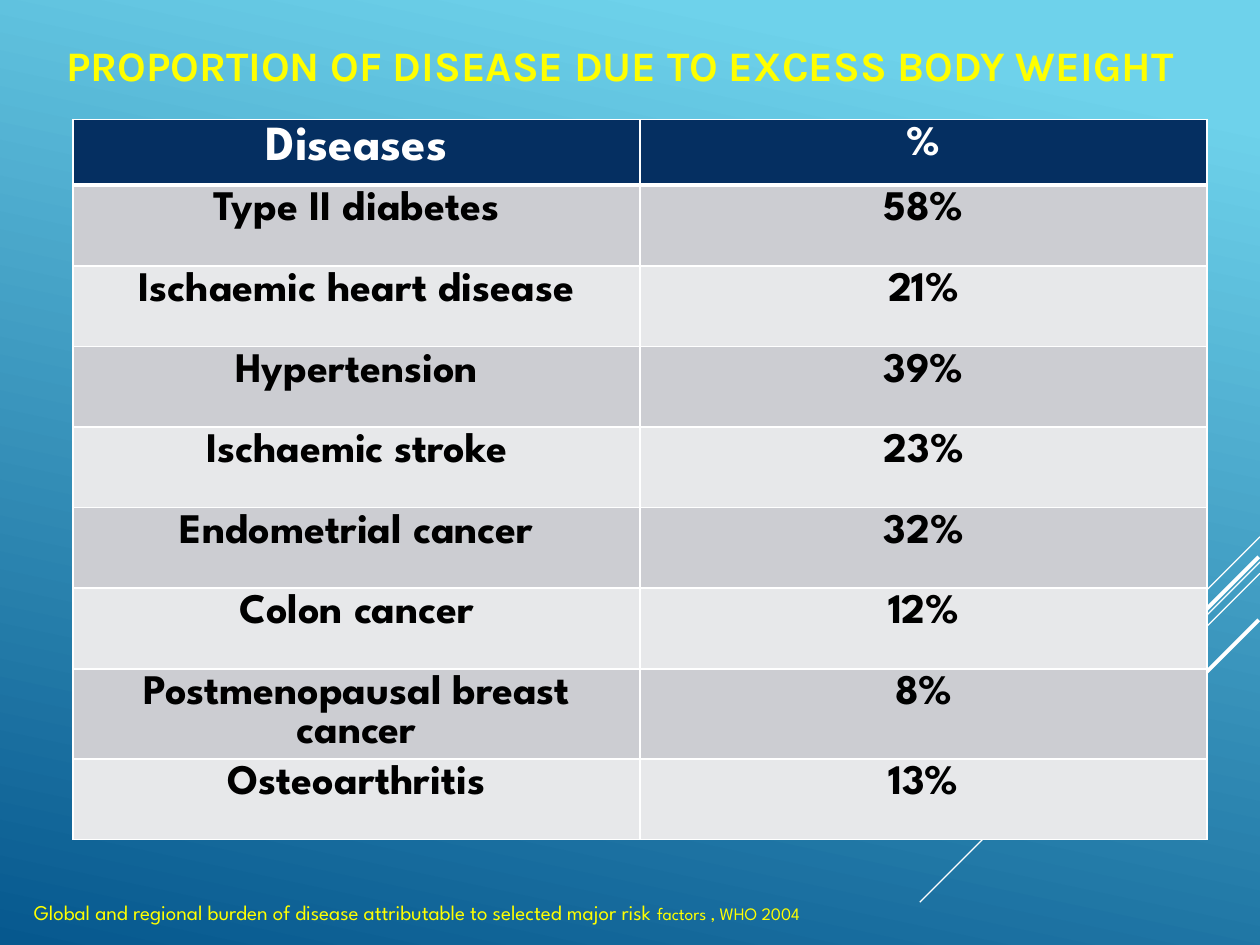
import pptx
import pptx.util
import pptx.dml.color
import pptx.enum.shapes
import pptx.enum.text
import pptx.oxml.ns
import lxml.etree

Inches = pptx.util.Inches
Pt = pptx.util.Pt
RGBColor = pptx.dml.color.RGBColor
CENTER = pptx.enum.text.PP_ALIGN.CENTER
MIDDLE = pptx.enum.text.MSO_ANCHOR.MIDDLE
qn = pptx.oxml.ns.qn

SKY = RGBColor(0x6E, 0xD2, 0xEB)
OCEAN = RGBColor(0x06, 0x58, 0x8E)
NAVY = RGBColor(0x05, 0x2F, 0x61)
BAND_DARK = RGBColor(0xCC, 0xCD, 0xD2)
BAND_LIGHT = RGBColor(0xE7, 0xE8, 0xEA)
WHITE = RGBColor(0xFF, 0xFF, 0xFF)
BLACK = RGBColor(0, 0, 0)
YELLOW = RGBColor(0xFF, 0xFF, 0)
BODY_FONT = "League Spartan"


def set_font(font, name, size, color, bold):
    font.name = name
    font.size = Pt(size)
    font.color.rgb = color
    font.bold = bold


def set_borders(cell, bottom):
    tc_pr = cell._tc.get_or_add_tcPr()
    for i, (side, width) in enumerate([("L", 1), ("R", 1), ("T", 1), ("B", bottom)]):
        ln = lxml.etree.Element(qn("a:ln" + side), w=str(Pt(width)))
        fill = lxml.etree.SubElement(ln, qn("a:solidFill"))
        lxml.etree.SubElement(fill, qn("a:srgbClr"), val=str(WHITE))
        tc_pr.insert(i, ln)


prs = pptx.Presentation()
prs.slide_width = Inches(10)
prs.slide_height = Inches(7.5)
s = prs.slides.add_slide(prs.slide_layouts[5])

bg = s.background.fill
bg.gradient()
bg.gradient_angle = 360 - 102
for stop, position, color in zip(bg.gradient_stops, (0.1, 1), (SKY, OCEAN)):
    stop.position = position
    stop.color.rgb = color

diagonals = [
    (10, 4.26, 0.83, 0.75),
    (10, 4.46, 2.7, 0.75),
    (10, 4.55, 1.72, 0.75),
    (9.99, 4.42, 1.57, 2.25),
    (9.99, 4.92, 1.14, 2.25),
]
for x, y, run, width in diagonals:
    line = s.shapes.add_connector(
        pptx.enum.shapes.MSO_CONNECTOR.STRAIGHT,
        Inches(x), Inches(y), Inches(x - run), Inches(y + run))
    line.line.color.rgb = WHITE
    line.line.width = Pt(width)
    lxml.etree.SubElement(line._element.spPr, qn("a:effectLst"))

title = s.shapes.title
title.left, title.top = Inches(0.42), Inches(0.08)
title.width, title.height = Inches(9), Inches(0.87)
tf = title.text_frame
tf.text = "PROPORTION OF DISEASE DUE TO EXCESS BODY WEIGHT"
tf.vertical_anchor = MIDDLE
p = tf.paragraphs[0]
p.alignment = CENTER
set_font(p.font, "Karla", 24, YELLOW, True)

rows = [
    ("Diseases", "%"),
    ("Type II diabetes", "58%"),
    ("Ischaemic heart disease", "21%"),
    ("Hypertension", "39%"),
    ("Ischaemic stroke", "23%"),
    ("Endometrial cancer", "32%"),
    ("Colon cancer", "12%"),
    ("Postmenopausal breast cancer", "8%"),
    ("Osteoarthritis", "13%"),
]
HEADER_H, ROW_H = 0.52, 0.64
table = s.shapes.add_table(
    len(rows), 2, Inches(0.58), Inches(0.95), Inches(9),
    Inches(HEADER_H + ROW_H * (len(rows) - 1))).table
for i, row in enumerate(rows):
    header = i == 0
    table.rows[i].height = Inches(HEADER_H if header else ROW_H)
    for j, text in enumerate(row):
        cell = table.cell(i, j)
        cell.text = text
        cell.fill.solid()
        cell.fill.fore_color.rgb = NAVY if header else (BAND_LIGHT, BAND_DARK)[i % 2]
        set_borders(cell, 3 if header else 1)
        if i == 1:
            cell._tc.tcPr.find(qn("a:lnT")).set("w", str(Pt(3)))
        p = cell.text_frame.paragraphs[0]
        p.alignment = CENTER
        set_font(p.font, BODY_FONT, 28 if header and j == 0 else 24,
                 WHITE if header else BLACK, True)

sp = s.shapes.add_textbox(Inches(0.17), Inches(7.09), Inches(7.42), Inches(0.3))
tf = sp.text_frame
tf.word_wrap = True
p = tf.paragraphs[0]
for text, size in [
    ("Global and regional burden of disease attributable to selected major risk ", 12),
    ("factors , WHO 2004", 10),
]:
    r = p.add_run()
    r.text = text
    set_font(r.font, BODY_FONT, size, YELLOW, False)

prs.save("out.pptx")
